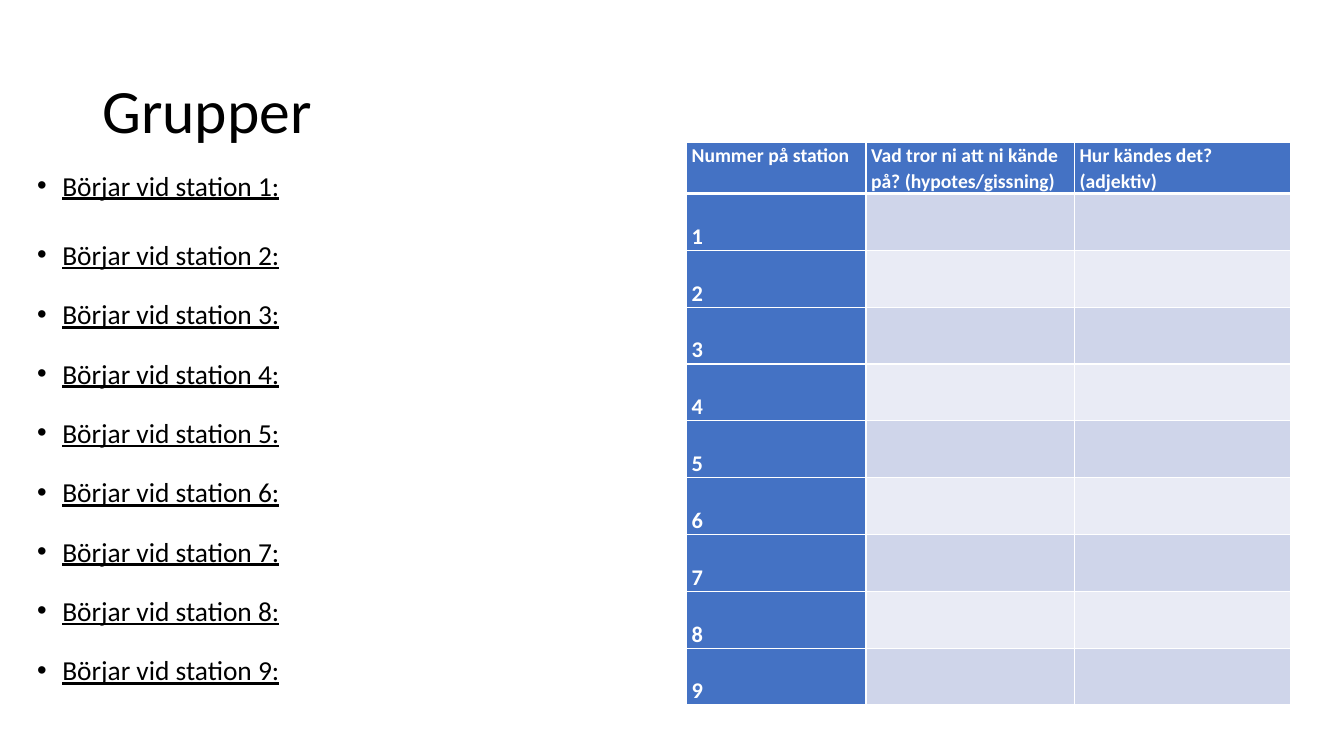
from lxml import etree
from pptx import Presentation
from pptx.dml.color import RGBColor
from pptx.enum import text
from pptx.oxml import ns
from pptx.util import Pt

BLACK = RGBColor(0x00, 0x00, 0x00)
WHITE = RGBColor(0xFF, 0xFF, 0xFF)
BLUE = RGBColor(0x44, 0x72, 0xC4)
BAND_DARK = RGBColor(0xCF, 0xD5, 0xEA)
BAND_LIGHT = RGBColor(0xE9, 0xEB, 0xF5)

STATIONS = range(1, 10)
HEADERS = ["Nummer på station",
           "Vad tror ni att ni kände på? (hypotes/gissning)",
           "Hur kändes det? (adjektiv)"]
COL_WIDTHS = [128.2, 149, 154]
HEADER_HEIGHT, ROW_HEIGHT = 36.6, 40.6


def add_xml(parent, tag, **attrs):
    el = etree.SubElement(parent, ns.qn(tag))
    for name, value in attrs.items():
        el.set(name, str(value))
    return el


def add_text(p, words, color, **font):
    r = p.add_run()
    r.text = words
    for name, value in {"name": "Calibri", **font}.items():
        setattr(r.font, name, value)
    r.font.color.rgb = color


def add_box(s, left, top, width, height, **frame):
    sp = s.shapes.add_textbox(Pt(left), Pt(top), Pt(width), Pt(height))
    tf = sp.text_frame
    for name, value in {"word_wrap": True, **frame}.items():
        setattr(tf, name, value)
    return tf


def add_title(s, words):
    tf = add_box(s, 66, 28.8, 828, 104.4,
                 vertical_anchor=text.MSO_ANCHOR.MIDDLE)
    p = tf.paragraphs[0]
    p.line_spacing = 0.9
    add_text(p, words, BLACK, size=Pt(44))


def add_station_list(s):
    tf = add_box(s, 19.4, 120.5, 874.8, 404, margin_top=0)
    gaps = {1: 0, 2: 26}
    for number in STATIONS:
        p = tf.paragraphs[0] if number == 1 else tf.add_paragraph()
        p.space_before = Pt(gaps.get(number, 18.9))
        pPr = p._p.get_or_add_pPr()
        pPr.set("marL", str(Pt(18)))
        pPr.set("indent", str(Pt(-18)))
        add_xml(pPr, "a:buFont", typeface="Arial")
        add_xml(pPr, "a:buChar", char="•")
        add_text(p, f"Börjar vid station {number}:", BLACK,
                 size=Pt(19.6), underline=True)


def format_cell(cell, fill, bottom=1):
    # Borders come before the fill in the cell properties
    tcPr = cell._tc.get_or_add_tcPr()
    for side, width in {"L": 1, "R": 1, "T": 1, "B": bottom}.items():
        ln = add_xml(tcPr, f"a:ln{side}", w=Pt(width))
        add_xml(add_xml(ln, "a:solidFill"), "a:srgbClr", val=WHITE)
    cell.fill.solid()
    cell.fill.fore_color.rgb = fill
    margins = {"margin_left": Pt(3.6), "margin_right": Pt(3.6),
               "margin_top": 0, "margin_bottom": 0}
    for name, value in margins.items():
        setattr(cell, name, value)


def fill_cell(cell, words, size, anchor):
    cell.vertical_anchor = anchor
    p = cell.text_frame.paragraphs[0]
    p.line_spacing = 1.07
    add_text(p, words, WHITE, size=Pt(size), bold=True)


def add_station_table(s):
    height = HEADER_HEIGHT + ROW_HEIGHT * len(STATIONS)
    table = s.shapes.add_table(len(STATIONS) + 1, len(HEADERS), Pt(490.4),
                               Pt(101.6), Pt(sum(COL_WIDTHS)), Pt(height)).table
    table.first_col = True
    for column, width in zip(table.columns, COL_WIDTHS):
        column.width = Pt(width)

    # Header row
    table.rows[0].height = Pt(HEADER_HEIGHT)
    for col, words in enumerate(HEADERS):
        cell = table.cell(0, col)
        format_cell(cell, BLUE, bottom=3)
        fill_cell(cell, words, 14, text.MSO_ANCHOR.TOP)

    # One banded row for each station
    for number in STATIONS:
        table.rows[number].height = Pt(ROW_HEIGHT)
        band = BAND_DARK if number % 2 else BAND_LIGHT
        for col, fill in enumerate([BLUE, band, band]):
            format_cell(table.cell(number, col), fill)
        fill_cell(table.cell(number, 0), str(number), 16,
                  text.MSO_ANCHOR.BOTTOM)


def main():
    prs = Presentation()
    prs.slide_width, prs.slide_height = Pt(960), Pt(540)
    s = prs.slides.add_slide(prs.slide_layouts[6])
    add_title(s, "Grupper")
    add_station_list(s)
    add_station_table(s)
    prs.save("out.pptx")


if __name__ == "__main__":
    main()
